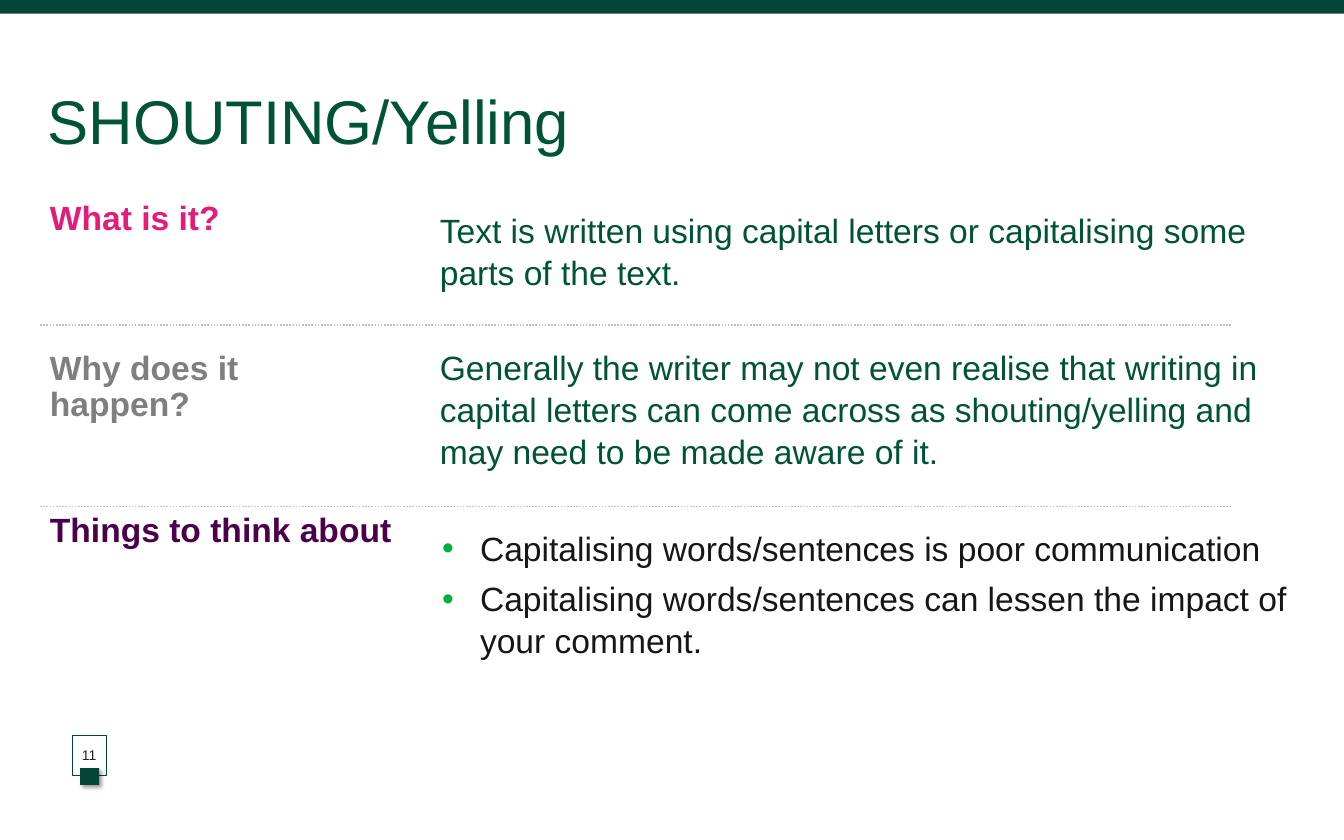
from lxml import etree
from pptx import Presentation
from pptx.dml.color import RGBColor
from pptx.enum.dml import MSO_LINE
from pptx.enum.shapes import MSO_CONNECTOR, MSO_SHAPE
from pptx.enum.text import MSO_ANCHOR, PP_ALIGN
from pptx.oxml import parse_xml
from pptx.oxml.ns import nsdecls, qn
from pptx.util import Cm, Pt

RECTANGLE = MSO_SHAPE.RECTANGLE
STRAIGHT = MSO_CONNECTOR.STRAIGHT
DOTTED = MSO_LINE.ROUND_DOT
TOP, MIDDLE = MSO_ANCHOR.TOP, MSO_ANCHOR.MIDDLE
CENTER = PP_ALIGN.CENTER

DARK_GREEN = RGBColor(0x03, 0x46, 0x38)
TEXT_GREEN = RGBColor(0x00, 0x53, 0x36)
BULLET_GREEN = RGBColor(0x00, 0xB1, 0x40)
PINK = RGBColor(0xE3, 0x1C, 0x79)
GREY = RGBColor(0x7F, 0x7F, 0x7F)
PURPLE = RGBColor(0x4C, 0x00, 0x4C)
NEAR_BLACK = RGBColor(0x17, 0x16, 0x16)
NUMBER_BLACK = RGBColor(0x23, 0x21, 0x21)
RULE_GREY = RGBColor(0xBF, 0xBF, 0xBF)
WHITE = RGBColor(0xFF, 0xFF, 0xFF)

FONT = "Arial"
WIDTH, HEIGHT = 45.16, 28.22
LEFT, ANSWER_LEFT, RULE_RIGHT = 1.35, 14.53, 41.35
NARROW, WIDE = (0.25, 0.13), (0.33, 0.18)


def set_font(paragraph, size, color, bold=False):
    font = paragraph.font
    font.name, font.size, font.bold = FONT, Pt(size), bold
    font.color.rgb = color


def set_frame(frame, inset, anchor):
    frame.word_wrap = True
    frame.vertical_anchor = anchor
    frame.margin_left = frame.margin_right = Cm(inset[0])
    frame.margin_top = frame.margin_bottom = Cm(inset[1])


def add_text(slide, box, lines, size, color, inset=NARROW, anchor=TOP,
             spacing=None, bold=False, bulleted=False):
    frame = slide.shapes.add_textbox(*map(Cm, box)).text_frame
    set_frame(frame, inset, anchor)
    frame.text = "\n".join(lines)
    for index, paragraph in enumerate(frame.paragraphs):
        if bulleted:
            add_bullet(paragraph)
        if index:
            paragraph.space_before = Pt(8)
        if spacing:
            paragraph.line_spacing = spacing
        set_font(paragraph, size, color, bold)


def add_bullet(paragraph):
    properties = paragraph._p.get_or_add_pPr()
    properties.set("marL", str(Cm(1.27)))
    properties.set("indent", str(-Cm(1.27)))
    color = etree.SubElement(properties, qn("a:buClr"))
    etree.SubElement(color, qn("a:srgbClr"), val=str(BULLET_GREEN))
    etree.SubElement(properties, qn("a:buFont"), typeface=FONT)
    etree.SubElement(properties, qn("a:buChar"), char="•")


def add_label(slide, top, width, height, text, color):
    add_text(slide, (LEFT, top, width, height), [text], 32, color,
             inset=WIDE, anchor=MIDDLE, spacing=0.9, bold=True)


def add_answer(slide, top, height, lines, color=TEXT_GREEN, **options):
    add_text(slide, (ANSWER_LEFT, top, 29.1, height), lines, 32, color,
             spacing=Pt(40), **options)


def add_rectangle(slide, box, fill):
    shape = slide.shapes.add_shape(RECTANGLE, *map(Cm, box))
    shape.shadow.inherit = False
    shape.fill.solid()
    shape.fill.fore_color.rgb = fill
    shape.line.fill.background()
    return shape


def add_rule(slide, top):
    rule = slide.shapes.add_connector(
        STRAIGHT, Cm(LEFT), Cm(top), Cm(RULE_RIGHT), Cm(top))
    rule.line.color.rgb = RULE_GREY
    rule.line.width = Pt(1.5)
    rule.line.dash_style = DOTTED
    etree.SubElement(rule._element.spPr, qn("a:effectLst"))


def add_page_number(slide, number):
    frame_box = add_rectangle(slide, (2.44, 24.69, 1.12, 1.35), WHITE)
    fill_color = frame_box._element.spPr.find(
        qn("a:solidFill")).find(qn("a:srgbClr"))
    etree.SubElement(fill_color, qn("a:alpha"), val="82000")
    frame_box.line.color.rgb = DARK_GREEN
    frame_box.line.width = Pt(0.75)
    set_frame(frame_box.text_frame, (0, 0.13), MIDDLE)
    paragraph = frame_box.text_frame.paragraphs[0]
    paragraph.text = number
    paragraph.alignment = CENTER
    set_font(paragraph, 13.3, NUMBER_BLACK)

    # Small square with a soft shadow
    square = add_rectangle(slide, (2.69, 25.81, 0.64, 0.56), DARK_GREEN)
    effects = square._element.spPr.find(qn("a:effectLst"))
    effects.append(parse_xml(
        f'<a:outerShdw {nsdecls("a")} blurRad="{Pt(4)}" dist="{Pt(3)}" '
        'dir="2700000" algn="tl" rotWithShape="0"><a:srgbClr val="000000">'
        '<a:alpha val="40000"/></a:srgbClr></a:outerShdw>'))


def main():
    presentation = Presentation()
    presentation.slide_width, presentation.slide_height = Cm(WIDTH), Cm(HEIGHT)
    slide = presentation.slides.add_slide(presentation.slide_layouts[6])

    # Top band and title
    add_rectangle(slide, (0, 0, WIDTH, 0.46), DARK_GREEN)
    add_text(slide, (LEFT, 2.44, 40.56, 2.62), ["SHOUTING/Yelling"],
             58.7, TEXT_GREEN, inset=(0.25, 0.36))

    # What is it?
    add_label(slide, 6.6, 14.12, 1.57, "What is it?", PINK)
    add_answer(slide, 6.88, 2.77, [
        "Text is written using capital letters or capitalising some "
        "parts of the text."])
    add_rule(slide, 10.92)

    # Why does it happen?
    add_label(slide, 11.63, 11.99, 2.79, "Why does it happen?", GREY)
    add_answer(slide, 11.48, 3.89, [
        "Generally the writer may not even realise that writing in capital "
        "letters can come across as shouting/yelling and may need to be made "
        "aware of it."])
    add_rule(slide, 17.02)

    # Things to think about
    add_label(slide, 16.81, 13.41, 2.08, "Things to think about", PURPLE)
    add_answer(slide, 17.5, 7.32, [
        "Capitalising words/sentences is poor communication",
        "Capitalising words/sentences can lessen the impact of your comment.",
    ], NEAR_BLACK, inset=WIDE, bulleted=True)

    add_page_number(slide, "11")
    presentation.save("out.pptx")


if __name__ == "__main__":
    main()
